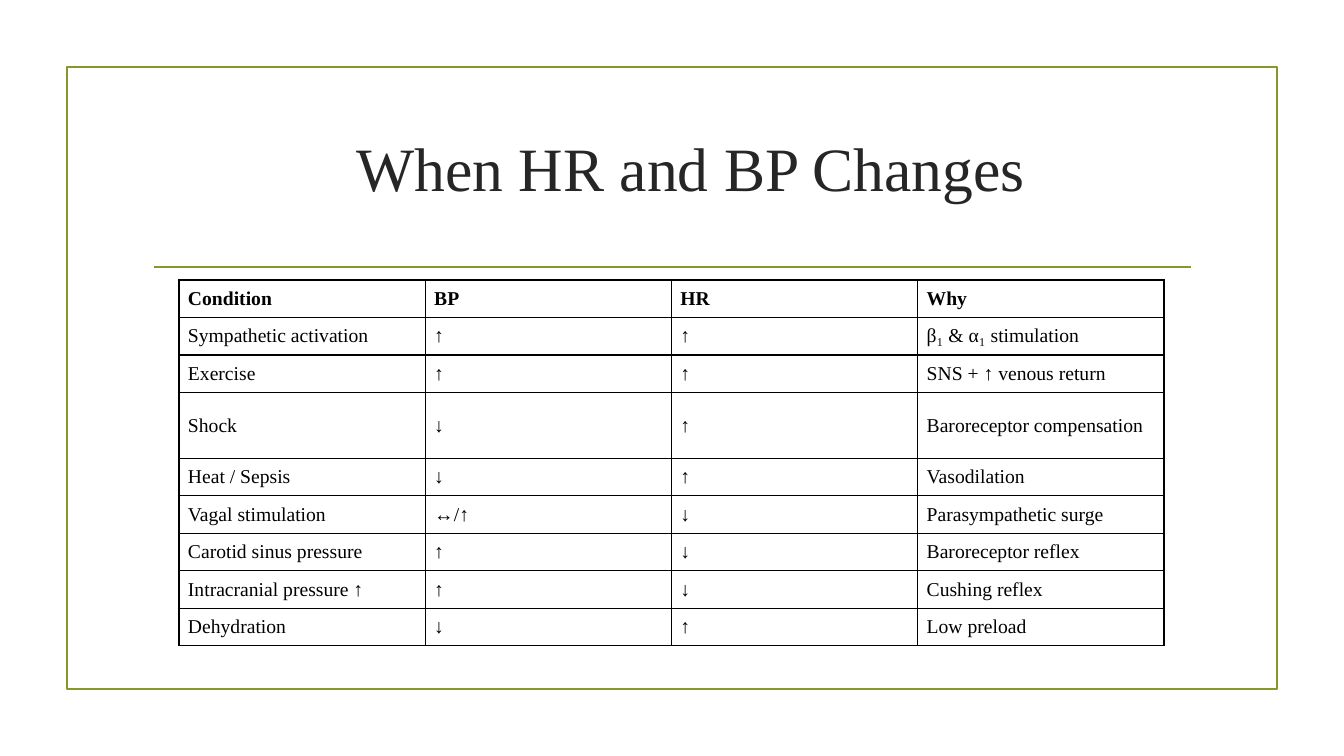
"""Build a slide with a table of heart rate and blood pressure changes."""
import lxml.etree
import pptx
import pptx.dml.color
import pptx.enum.shapes
import pptx.enum.text
import pptx.oxml.ns
import pptx.util

TITLE = "When HR and BP Changes"
CONDITIONS = [
    ("Condition", "BP", "HR", "Why"),
    ("Sympathetic activation", "↑", "↑", "β₁ & α₁ stimulation"),
    ("Exercise", "↑", "↑", "SNS + ↑ venous return"),
    ("Shock", "↓", "↑", "Baroreceptor compensation"),
    ("Heat / Sepsis", "↓", "↑", "Vasodilation"),
    ("Vagal stimulation", "↔/↑", "↓", "Parasympathetic surge"),
    ("Carotid sinus pressure", "↑", "↓", "Baroreceptor reflex"),
    ("Intracranial pressure ↑", "↑", "↓", "Cushing reflex"),
    ("Dehydration", "↓", "↑", "Low preload"),
]
TALL_CONDITION = "Shock"

FONT = "Times New Roman"
GREEN = pptx.dml.color.RGBColor(0x83, 0x99, 0x2A)
CHARCOAL = pptx.dml.color.RGBColor(0x26, 0x26, 0x26)
BLACK = pptx.dml.color.RGBColor(0, 0, 0)

SLIDE = (1344, 756)
FRAME = (67, 67, 1210, 622)
RULE = (154, 267, 1191, 267)
TITLE_BOX = (162, 95, 1058, 144)
GRID = (179, 280, 985, 366)
TALL_ROW = 66
CELL_INSET = (9, 5)


def px(length):
    return pptx.util.Emu(round(length * 914400 / 100.8))


def add_run(paragraph, text, size, color, bold=False):
    run = paragraph.add_run()
    run.text = text
    run.font.name = FONT
    run.font.size = pptx.util.Pt(size)
    run.font.color.rgb = color
    run.font.bold = bold


def add_borders(cell):
    properties = cell._tc.get_or_add_tcPr()
    qn = pptx.oxml.ns.qn
    for side in "LRTB":
        border = lxml.etree.SubElement(properties, qn(f"a:ln{side}"), w=str(pptx.util.Pt(1)))
        fill = lxml.etree.SubElement(border, qn("a:solidFill"))
        lxml.etree.SubElement(fill, qn("a:srgbClr"), val=str(BLACK))


def add_frame(slide):
    frame = slide.shapes.add_shape(pptx.enum.shapes.MSO_SHAPE.RECTANGLE, *map(px, FRAME))
    frame.shadow.inherit = False
    frame.fill.background()
    rule = slide.shapes.add_connector(pptx.enum.shapes.MSO_CONNECTOR.STRAIGHT, *map(px, RULE))
    lxml.etree.SubElement(rule._element.spPr, pptx.oxml.ns.qn("a:effectLst"))
    for outline in (frame.line, rule.line):
        outline.color.rgb = GREEN
        outline.width = pptx.util.Pt(1.25)


def add_title(slide):
    title = slide.shapes.title
    title.left, title.top, title.width, title.height = map(px, TITLE_BOX)
    title.text_frame.vertical_anchor = pptx.enum.text.MSO_ANCHOR.MIDDLE
    heading = title.text_frame.paragraphs[0]
    heading.alignment = pptx.enum.text.PP_ALIGN.CENTER
    add_run(heading, TITLE, 44, CHARCOAL)


def add_conditions(slide):
    columns = len(CONDITIONS[0])
    table = slide.shapes.add_table(len(CONDITIONS), columns, *map(px, GRID)).table
    table.first_row = table.horz_banding = False
    for column in table.columns:
        column.width = px(GRID[2] / columns)
    plain_row = (GRID[3] - TALL_ROW) / (len(CONDITIONS) - 1)
    for r, condition in enumerate(CONDITIONS):
        table.rows[r].height = px(TALL_ROW if condition[0] == TALL_CONDITION else plain_row)
        for c, text in enumerate(condition):
            cell = table.cell(r, c)
            add_borders(cell)
            cell.fill.background()
            cell.vertical_anchor = pptx.enum.text.MSO_ANCHOR.MIDDLE
            cell.margin_left = cell.margin_right = px(CELL_INSET[0])
            cell.margin_top = cell.margin_bottom = px(CELL_INSET[1])
            add_run(cell.text_frame.paragraphs[0], text, 14, BLACK, bold=r == 0)


def main():
    deck = pptx.Presentation()
    deck.slide_width, deck.slide_height = map(px, SLIDE)
    slide = deck.slides.add_slide(deck.slide_layouts[5])
    add_frame(slide)
    add_title(slide)
    add_conditions(slide)
    deck.save("out.pptx")


if __name__ == "__main__":
    main()
